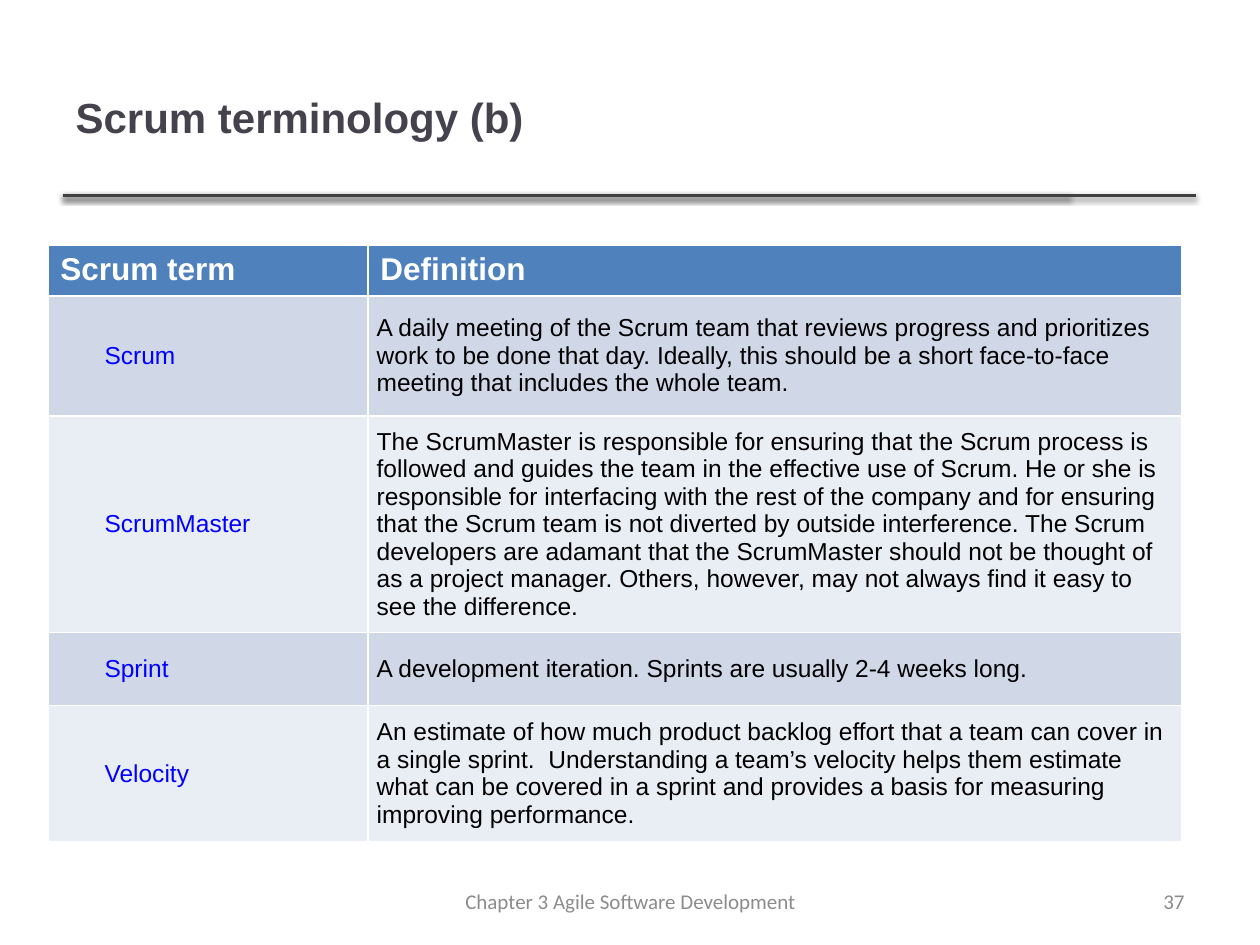
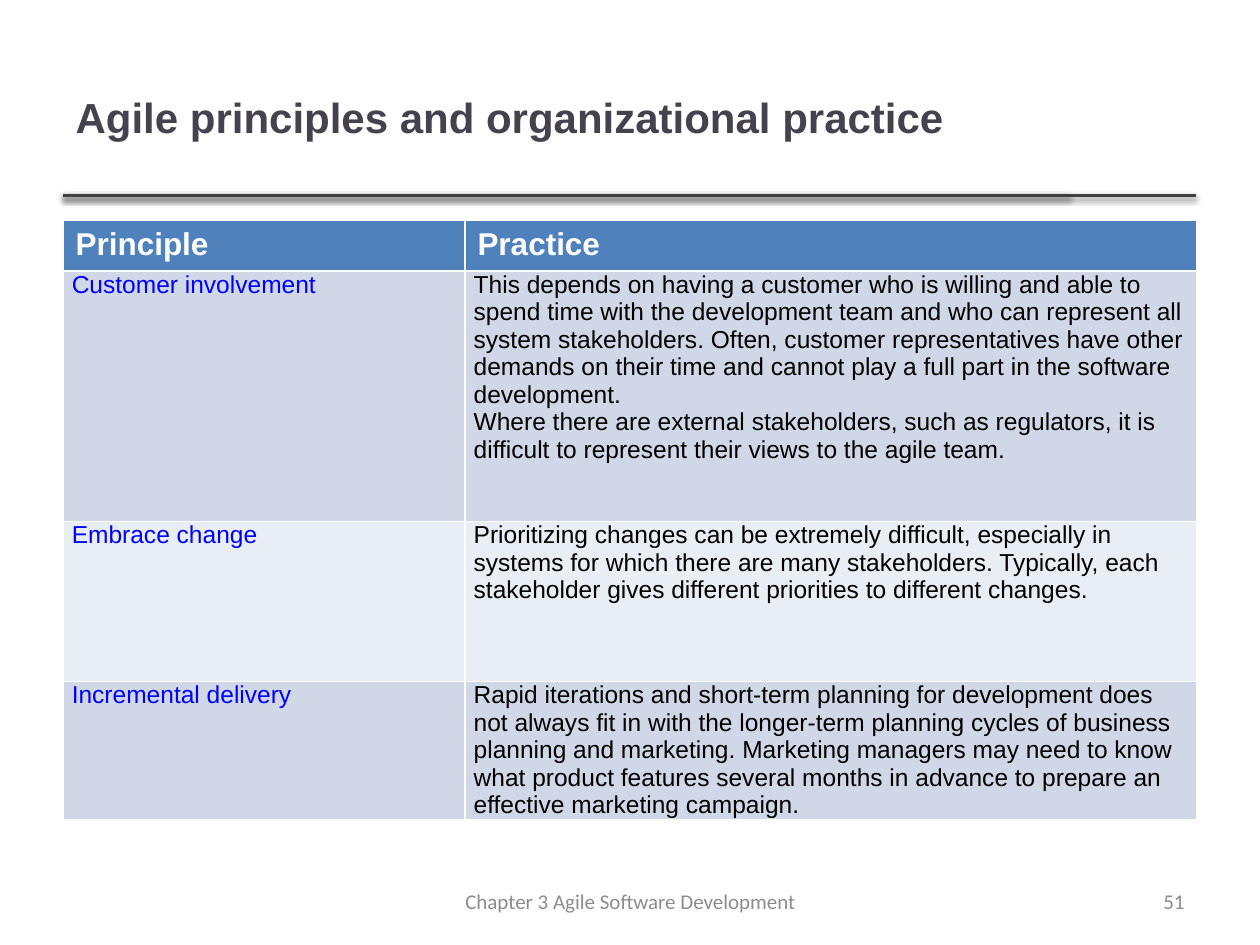
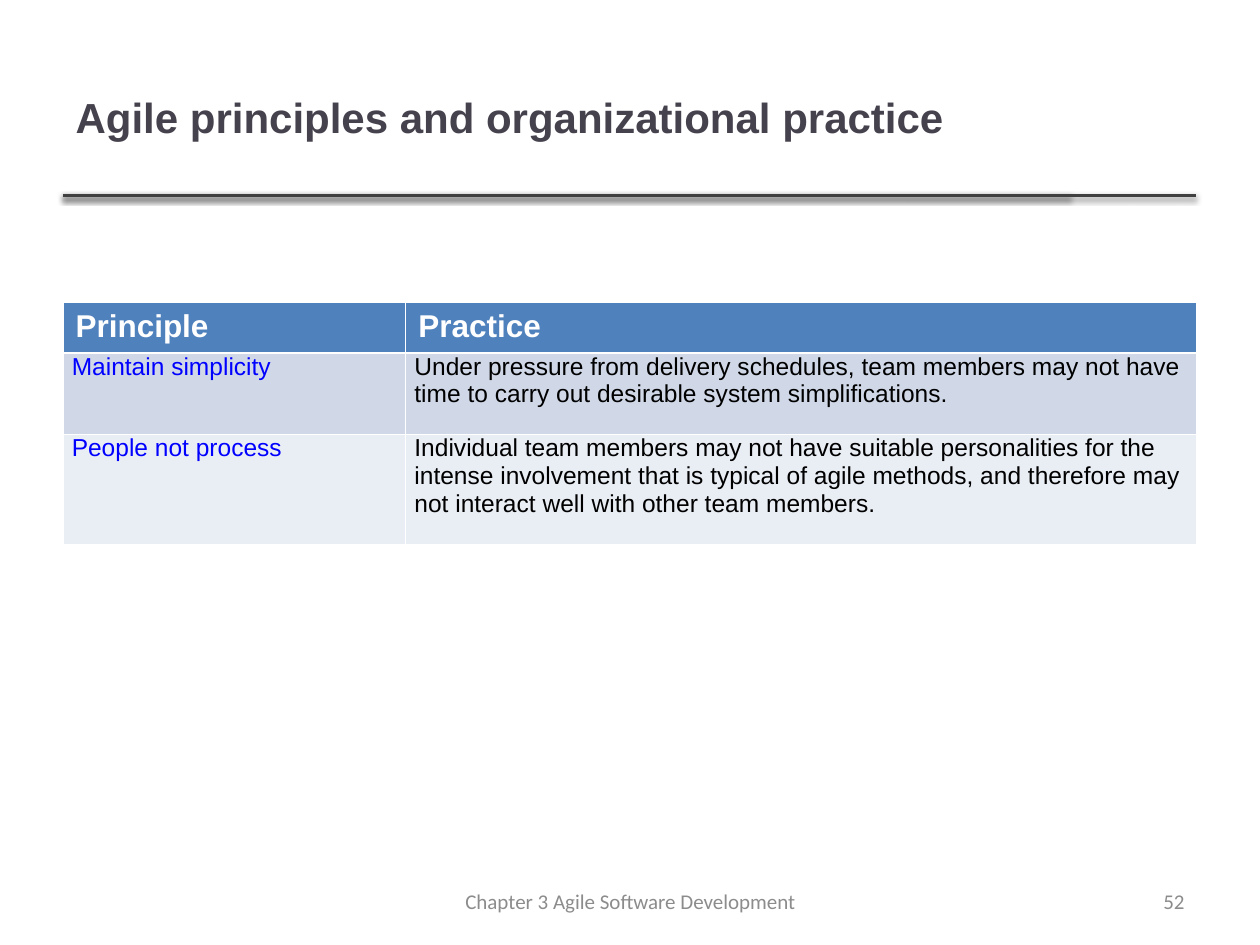
"""Build three slides of agile terms and principles, each with a two-column table."""
from lxml import etree
from pptx import Presentation
from pptx import util as u
from pptx.dml.color import RGBColor
from pptx.enum import shapes, text
from pptx.oxml import ns

TITLE_COLOR = RGBColor(0x46, 0x42, 0x4D)
RULE_COLOR = RGBColor(0x40, 0x40, 0x40)
FOOTER_COLOR = RGBColor(0x8C, 0x8C, 0x8C)
HEADER_FILL = RGBColor(0x4F, 0x81, 0xBD)
BAND_FILLS = (RGBColor(0xD0, 0xD8, 0xE8), RGBColor(0xE9, 0xED, 0xF4))
TERM_COLOR = RGBColor(0x00, 0x00, 0xFF)
BLACK = RGBColor(0x00, 0x00, 0x00)
WHITE = RGBColor(0xFF, 0xFF, 0xFF)

WIDTH, HEIGHT = 10, 7.5
MARGIN = 0.5
TABLE_WIDTH = WIDTH - 2 * MARGIN
HEADER_HEIGHT = 0.4
RULE_TOP = 1.55
RULE_ENDS = (8.49, 9.49)
FOOTER_TOP, FOOTER_HEIGHT = 6.95, 0.4
FOOTER = "Chapter 3 Agile Software Development"

PAGES = [
    {
        "title": "Scrum terminology (b)", "number": 37,
        "left": 0.38, "top": 1.95, "term_width": 2.54,
        "anchor": text.MSO_ANCHOR.MIDDLE, "indent": 0.38, "first_gap": 6,
        "header": ("Scrum term", "Definition"),
        "rows": [
            (0.95, "Scrum", [
                "A daily meeting of the Scrum team that reviews progress and prioritizes "
                "work to be done that day. Ideally, this should be a short face-to-face "
                "meeting that includes the whole team."]),
            (1.72, "ScrumMaster", [
                "The ScrumMaster is responsible for ensuring that the Scrum process is "
                "followed and guides the team in the effective use of Scrum. He or she is "
                "responsible for interfacing with the rest of the company and for ensuring "
                "that the Scrum team is not diverted by outside interference. The Scrum "
                "developers are adamant that the ScrumMaster should not be thought of as a "
                "project manager. Others, however, may not always find it easy to see the "
                "difference."]),
            (0.58, "Sprint", [
                "A development iteration. Sprints are usually 2-4 weeks long."]),
            (1.08, "Velocity", [
                "An estimate of how much product backlog effort that a team can cover in a "
                "single sprint.  Understanding a team’s velocity helps them estimate what "
                "can be covered in a sprint and provides a basis for measuring improving "
                "performance."]),
        ],
    },
    {
        "title": "Agile principles and organizational practice", "number": 51,
        "left": MARGIN, "top": 1.75, "term_width": 3.19,
        "anchor": text.MSO_ANCHOR.TOP, "indent": 0, "first_gap": 0,
        "header": ("Principle", "Practice"),
        "rows": [
            (1.99, "Customer involvement", [
                "This depends on having a customer who is willing and able to spend time "
                "with the development team and who can represent all system stakeholders. "
                "Often, customer representatives have other demands on their time and "
                "cannot play a full part in the software development.",
                "Where there are external stakeholders, such as regulators, it is difficult "
                "to represent their views to the agile team."]),
            (1.27, "Embrace change", [
                "Prioritizing changes can be extremely difficult, especially in systems for "
                "which there are many stakeholders. Typically, each stakeholder gives "
                "different priorities to different changes."]),
            (1.09, "Incremental delivery", [
                "Rapid iterations and short-term planning for development does not always "
                "fit in with the longer-term planning cycles of business planning and "
                "marketing. Marketing managers may need to know what product features "
                "several months in advance to prepare an effective marketing campaign."]),
        ],
    },
    {
        "title": "Agile principles and organizational practice", "number": 52,
        "left": MARGIN, "top": 2.4, "term_width": 2.72,
        "anchor": text.MSO_ANCHOR.TOP, "indent": 0, "first_gap": 0,
        "header": ("Principle", "Practice"),
        "rows": [
            (0.65, "Maintain simplicity", [
                "Under pressure from delivery schedules, team members may not have time to "
                "carry out desirable system simplifications."]),
            (0.87, "People not process", [
                "Individual team members may not have suitable personalities for the "
                "intense involvement that is typical of agile methods, and therefore may "
                "not interact well with other team members."]),
        ],
    },
]


def inches(*lengths):
    return [u.Inches(length) for length in lengths]


def write(para, words, size, color, bold=False, font="Arial"):
    span = para.add_run()
    span.text = words
    span.font.name, span.font.size = font, u.Pt(size)
    span.font.bold, span.font.color.rgb = bold, color


def add_title(page, words):
    box = page.shapes.title
    box.left, box.top, box.width, box.height = inches(MARGIN, 0.3, 7.98, 1.25)
    box.text_frame.vertical_anchor = text.MSO_ANCHOR.MIDDLE
    para = box.text_frame.paragraphs[0]
    para.alignment = text.PP_ALIGN.LEFT
    write(para, words, 24, TITLE_COLOR, bold=True)


def add_rule(page, end):
    rule = page.shapes.add_connector(
        shapes.MSO_CONNECTOR.STRAIGHT, *inches(MARGIN, RULE_TOP, end, RULE_TOP))
    rule.line.color.rgb, rule.line.width = RULE_COLOR, u.Pt(2)
    effects = etree.SubElement(rule._element.spPr, ns.qn("a:effectLst"))
    shadow = etree.SubElement(
        effects, ns.qn("a:outerShdw"), blurRad=str(u.Pt(3.1)), dist=str(u.Pt(1.6)),
        dir="5400000", rotWithShape="0")
    black = etree.SubElement(shadow, ns.qn("a:srgbClr"), val=str(BLACK))
    etree.SubElement(black, ns.qn("a:alpha"), val="38000")


def add_footer(page, left, width, words, alignment):
    box = page.shapes.add_textbox(*inches(left, FOOTER_TOP, width, FOOTER_HEIGHT))
    frame = box.text_frame
    frame.word_wrap = True
    frame.vertical_anchor = text.MSO_ANCHOR.MIDDLE
    frame.paragraphs[0].alignment = alignment
    write(frame.paragraphs[0], words, 12, FOOTER_COLOR, font="Calibri")


def fill_cell(cell, fill, paragraphs, size, color, bold=False):
    cell.fill.solid()
    cell.fill.fore_color.rgb = fill
    for index, words in enumerate(paragraphs):
        frame = cell.text_frame
        para = frame.add_paragraph() if index else frame.paragraphs[0]
        write(para, words, size, color, bold)


def add_terms(page, content):
    heights = [HEADER_HEIGHT] + [height for height, _, _ in content["rows"]]
    table = page.shapes.add_table(
        len(heights), 2,
        *inches(content["left"], content["top"], TABLE_WIDTH, sum(heights))).table
    widths = (content["term_width"], TABLE_WIDTH - content["term_width"])
    for column, width in zip(table.columns, widths):
        column.width = u.Inches(width)
    for row, height in zip(table.rows, heights):
        row.height = u.Inches(height)
    for column, words in enumerate(content["header"]):
        fill_cell(table.cell(0, column), HEADER_FILL, [words], 18, WHITE, bold=True)
    for row, (_, term, meaning) in enumerate(content["rows"], 1):
        fill = BAND_FILLS[(row - 1) % 2]
        cells = [table.cell(row, column) for column in range(2)]
        for cell, words, color in zip(cells, ([term], meaning), (TERM_COLOR, BLACK)):
            fill_cell(cell, fill, words, 14, color)
            cell.vertical_anchor = content["anchor"]
            cell.margin_left = cell.margin_right = u.Inches(0.07)
            cell.margin_top = cell.margin_bottom = 0
            if row == 1:
                cell.text_frame.paragraphs[0].space_after = u.Pt(content["first_gap"])
        properties = cells[0].text_frame.paragraphs[0]._p.get_or_add_pPr()
        properties.set("indent", str(u.Inches(content["indent"])))


def main():
    deck = Presentation()
    deck.slide_width, deck.slide_height = inches(WIDTH, HEIGHT)
    for content in PAGES:
        page = deck.slides.add_slide(deck.slide_layouts[5])
        for end in RULE_ENDS:
            add_rule(page, end)
        add_title(page, content["title"])
        add_terms(page, content)
        add_footer(page, 3.42, 3.17, FOOTER, text.PP_ALIGN.CENTER)
        add_footer(page, 7.17, 2.33, str(content["number"]), text.PP_ALIGN.RIGHT)
    deck.save("out.pptx")


if __name__ == "__main__":
    main()
